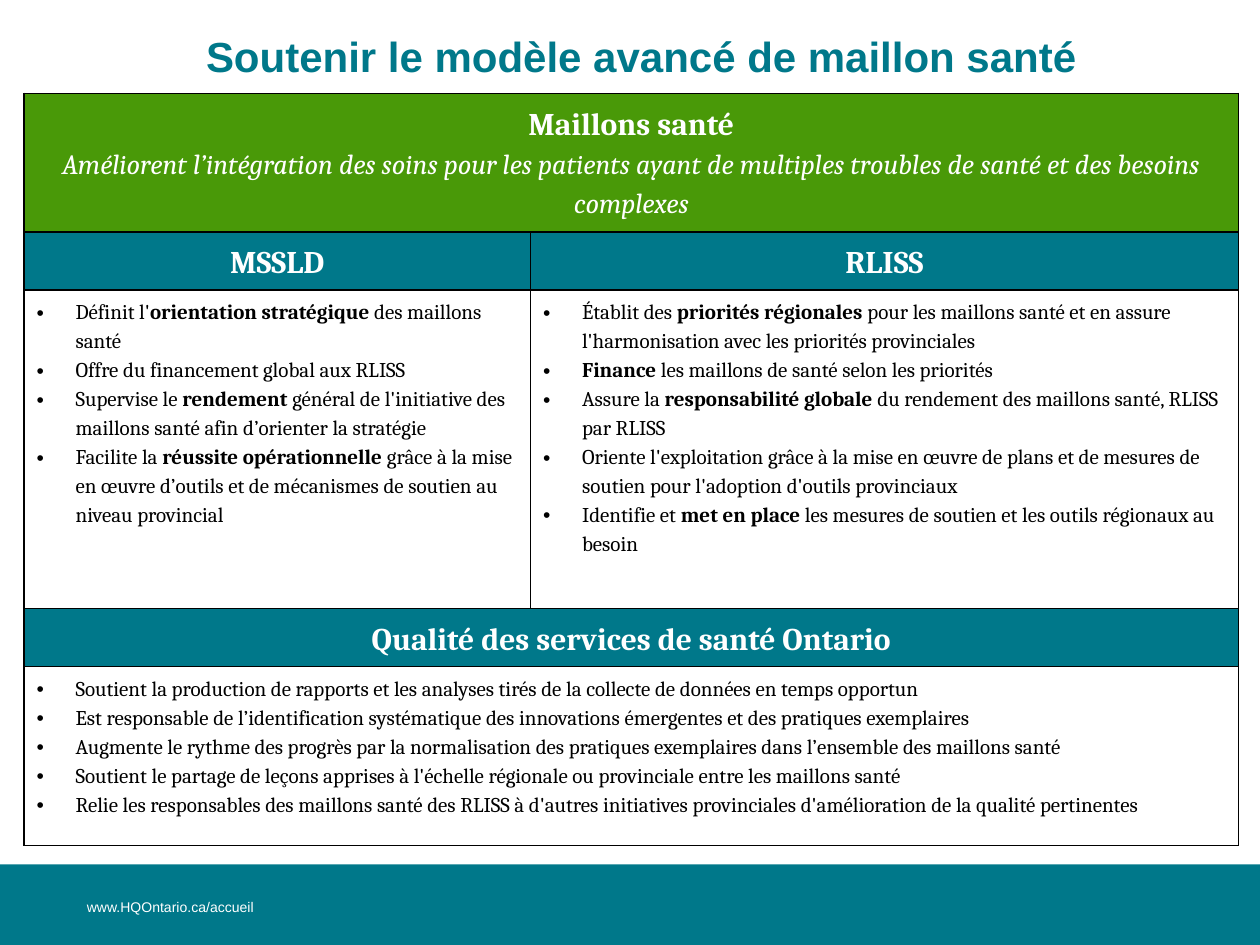
from lxml import etree
from pptx import Presentation
from pptx.dml.color import RGBColor
from pptx.enum.shapes import MSO_SHAPE
from pptx.enum.text import MSO_ANCHOR, PP_ALIGN
from pptx.oxml.ns import qn
from pptx.util import Inches, Pt

TEAL = RGBColor(0x00, 0x78, 0x8A)
GREEN = RGBColor(0x49, 0x99, 0x08)
WHITE = RGBColor(0xFF, 0xFF, 0xFF)
BLACK = RGBColor(0x00, 0x00, 0x00)

MINISTRY_ROLES = [
    "Définit l'**orientation stratégique** des maillons santé",
    "Offre du financement global aux RLISS",
    "Supervise le **rendement **général de l'initiative des maillons santé afin d’orienter la stratégie",
    "Facilite la **réussite opérationnelle** grâce à la mise en œuvre d’outils et de mécanismes "
    "de soutien au niveau provincial",
]
NETWORK_ROLES = [
    "Établit des **priorités régionales **pour les maillons santé et en assure l'harmonisation "
    "avec les priorités provinciales",
    "**Finance** les maillons de santé selon les priorités",
    "Assure la **responsabilité globale** du rendement des maillons santé, RLISS par RLISS",
    "Oriente l'exploitation grâce à la mise en œuvre de plans et de mesures de soutien pour "
    "l'adoption d'outils provinciaux",
    "Identifie et **met en place** les mesures de soutien et les outils régionaux au besoin",
]
QUALITY_ROLES = [
    "Soutient la production de rapports et les analyses tirés de la collecte de données en temps opportun",
    "Est responsable de l’identification systématique des innovations émergentes et des pratiques exemplaires",
    "Augmente le rythme des progrès par la normalisation des pratiques exemplaires dans "
    "l’ensemble des maillons santé",
    "Soutient le partage de leçons apprises à l'échelle régionale ou provinciale entre les maillons santé",
    "Relie les responsables des maillons santé des RLISS à d'autres initiatives provinciales "
    "d'amélioration de la qualité pertinentes",
]


def add_run(paragraph, text, font_name, size, color, bold=False, italic=False):
    run = paragraph.add_run()
    run.text = text
    run.font.name = font_name
    run.font.size = Pt(size)
    run.font.color.rgb = color
    run.font.bold = bold
    run.font.italic = italic


def add_bullets(cell, items):
    """Fill a cell with bullets; text between ** marks is bold."""
    for index, item in enumerate(items):
        text_frame = cell.text_frame
        paragraph = text_frame.add_paragraph() if index else text_frame.paragraphs[0]
        properties = paragraph._p.get_or_add_pPr()
        properties.set("marL", str(Inches(0.31)))
        properties.set("indent", str(-Inches(0.31)))
        paragraph.line_spacing = 1.2
        etree.SubElement(properties, qn("a:buFont"), typeface="Arial")
        etree.SubElement(properties, qn("a:buChar"), char="•")
        for part_index, part in enumerate(item.split("**")):
            if part:
                add_run(paragraph, part, "Cambria", 12, BLACK, bold=part_index % 2 == 1)


presentation = Presentation()
presentation.slide_width = Inches(10)
presentation.slide_height = Inches(7.5)
slide = presentation.slides.add_slide(presentation.slide_layouts[6])

# Footer band
band = slide.shapes.add_shape(
    MSO_SHAPE.RECTANGLE, Inches(0), Inches(6.86), Inches(10.04), Inches(0.67))
band.shadow.inherit = False
band.fill.solid()
band.fill.fore_color.rgb = TEAL
band.line.fill.background()

# Title
title = slide.shapes.add_textbox(Inches(0.59), Inches(0), Inches(9), Inches(0.89))
title.text_frame.word_wrap = True
title.text_frame.vertical_anchor = MSO_ANCHOR.MIDDLE
paragraph = title.text_frame.paragraphs[0]
paragraph.alignment = PP_ALIGN.CENTER
add_run(paragraph, "Soutenir le modèle avancé de maillon santé", "Arial", 24, TEAL, bold=True)

# Web address
footer = slide.shapes.add_textbox(Inches(0.59), Inches(7.08), Inches(3.08), Inches(0.27))
footer.text_frame.word_wrap = True
add_run(footer.text_frame.paragraphs[0], "www.HQOntario.ca/accueil", "Arial", 8, WHITE)

# Table grid
row_heights = [1.05, 0.45, 2.53, 0.45, 1.42]
column_widths = [4.02, 5.62]
table = slide.shapes.add_table(
    len(row_heights), len(column_widths), Inches(0.19), Inches(0.74),
    Inches(sum(column_widths)), Inches(sum(row_heights))).table
table.first_row = False
table.horz_banding = False
for row, height in zip(table.rows, row_heights):
    row.height = Inches(height)
for column, width in zip(table.columns, column_widths):
    column.width = Inches(width)

# Borders and fills
row_fills = [GREEN, TEAL, None, TEAL, WHITE]
for row, fill_color in zip(table.rows, row_fills):
    for cell in row.cells:
        properties = cell._tc.get_or_add_tcPr()
        for side in ("a:lnL", "a:lnR", "a:lnT", "a:lnB"):
            line = etree.SubElement(properties, qn(side), w=str(Pt(1)))
            line_fill = etree.SubElement(line, qn("a:solidFill"))
            etree.SubElement(line_fill, qn("a:srgbClr"), val=str(BLACK))
        if fill_color is None:
            cell.fill.background()
        else:
            cell.fill.solid()
            cell.fill.fore_color.rgb = fill_color
for row_index in (0, 3, 4):
    table.cell(row_index, 0).merge(table.cell(row_index, 1))

# Headings
headings = [
    (0, 0, "Maillons santé"),
    (1, 0, "MSSLD"),
    (1, 1, "RLISS"),
    (3, 0, "Qualité des services de santé Ontario"),
]
for row_index, column_index, text in headings:
    paragraph = table.cell(row_index, column_index).text_frame.paragraphs[0]
    paragraph.alignment = PP_ALIGN.CENTER
    paragraph.line_spacing = 1.2
    add_run(paragraph, text, "Cambria", 18, WHITE, bold=True)

# Line under the first heading
paragraph = table.cell(0, 0).text_frame.add_paragraph()
paragraph.alignment = PP_ALIGN.CENTER
paragraph.line_spacing = 1.2
add_run(paragraph,
        "Améliorent l’intégration des soins pour les patients ayant de multiples troubles "
        "de santé et des besoins complexes",
        "Cambria", 16, WHITE, italic=True)

# Roles
add_bullets(table.cell(2, 0), MINISTRY_ROLES)
add_bullets(table.cell(2, 1), NETWORK_ROLES)
add_bullets(table.cell(4, 0), QUALITY_ROLES)

presentation.save("out.pptx")
